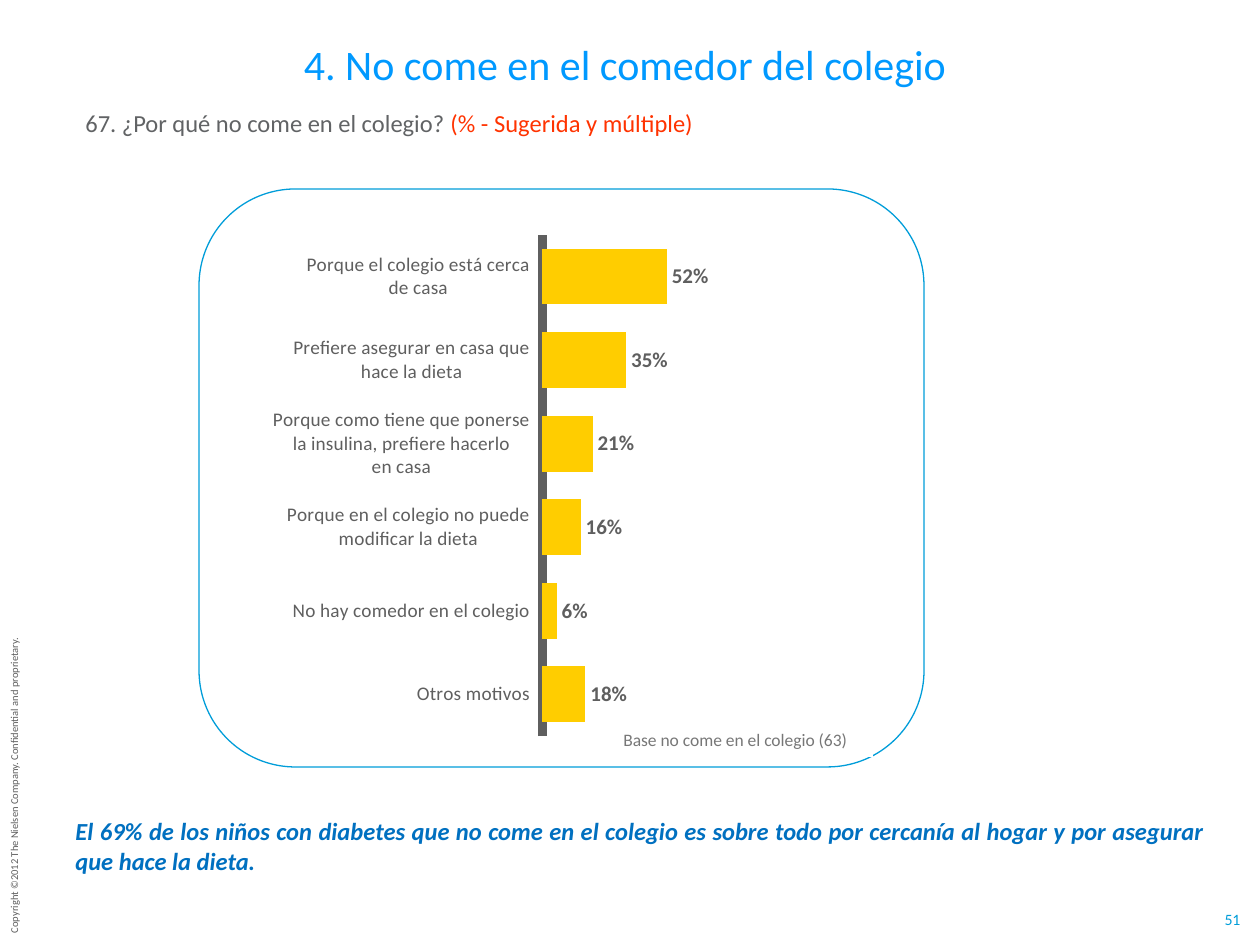
from dataclasses import dataclass

from lxml.etree import SubElement
from pptx import Presentation
from pptx.chart.data import CategoryChartData
from pptx.dml.color import RGBColor
from pptx.enum.chart import XL_CHART_TYPE, XL_LABEL_POSITION, XL_TICK_LABEL_POSITION, XL_TICK_MARK
from pptx.enum.shapes import MSO_SHAPE
from pptx.enum.text import MSO_ANCHOR, MSO_AUTO_SIZE, PP_ALIGN
from pptx.oxml.ns import qn
from pptx.util import Emu, Pt

SCALE = 914400 / 126
FACE = "Calibri"
GREY = "5F5F5F"
BLUE = "009DD9"
BARS = {
    "Porque el colegio está cerca\nde casa": 0.52,
    "Prefiere asegurar en casa que\nhace la dieta": 0.35,
    "Porque como tiene que ponerse\nla insulina, prefiere hacerlo\nen casa": 0.21,
    "Porque en el colegio no puede\nmodificar la dieta": 0.16,
    "No hay comedor en el colegio": 0.06,
    "Otros motivos": 0.18,
}
PLOT = {"x": 0.51, "y": 0.023, "w": 0.401, "h": 0.902}


@dataclass
class Label:
    box: tuple[int, int, int, int]
    runs: list[tuple[str, str]]
    size: int
    align: PP_ALIGN = PP_ALIGN.LEFT
    strong: bool = False
    wrap: bool = True
    turn: int = 0
    pad: bool = True
    fill: str = ""


LABELS = [
    Label((-149, 770, 326, 25),
          [("Copyright ©2012 The Nielsen Company. Confidential and proprietary.", GREY)],
          6, wrap=False, turn=270),
    Label((1223, 910, 19, 19), [("51", BLUE)], 9, PP_ALIGN.CENTER, wrap=False, pad=False),
    Label((105, 32, 1040, 63), [("4. No come en el comedor del colegio", "0099FF")],
          24, PP_ALIGN.CENTER),
    Label((73, 102, 1187, 150),
          [("67. ¿Por qué no come en el colegio? ", "616365"),
           ("(% - Sugerida y múltiple)", "FF3300")], 14),
    Label((63, 810, 1155, 72),
          [("El 69% de los niños con diabetes que no come en el colegio es sobre todo "
            "por cercanía al hogar y por asegurar que hace la dieta.", "0070C0")],
          14, PP_ALIGN.JUSTIFY, strong=True),
]
BASE = Label((611, 723, 262, 34), [("Base no come en el colegio (63)", "777777")],
             10, fill="FFFFFF")


def px(n: int) -> Emu:
    return Emu(round(n * SCALE))


def hue(code: str) -> RGBColor:
    return RGBColor.from_string(code)


def paint(item, code: str) -> None:
    item.fill.solid()
    item.fill.fore_color.rgb = hue(code)


def write(slide, label: Label) -> None:
    box = slide.shapes.add_textbox(*map(px, label.box))
    box.rotation = label.turn
    if label.fill:
        paint(box, label.fill)
    frame = box.text_frame
    frame.word_wrap = label.wrap
    frame.auto_size = MSO_AUTO_SIZE.NONE if label.wrap else MSO_AUTO_SIZE.SHAPE_TO_FIT_TEXT
    if not label.pad:
        frame.margin_left = frame.margin_right = frame.margin_top = frame.margin_bottom = 0
        frame.vertical_anchor = MSO_ANCHOR.MIDDLE
    para = frame.paragraphs[0]
    para.alignment = label.align
    style(para.font, label.size, label.strong)
    para.font.italic = label.strong
    for text, code in label.runs:
        run = para.add_run()
        run.text = text
        run.font.color.rgb = hue(code)


def style(font, size: int, bold: bool, code: str = GREY) -> None:
    font.name, font.size, font.bold = FACE, Pt(size), bold
    font.color.rgb = hue(code)


def panel(slide) -> None:
    card = slide.shapes.add_shape(MSO_SHAPE.ROUNDED_RECTANGLE, *map(px, (199, 189, 725, 578)))
    card.shadow.inherit = False
    paint(card, "FFFFFF")
    card.line.color.rgb = hue(BLUE)
    card.line.width = Pt(0.75)


def place(chart) -> None:
    area = chart.plots[0]._element.getparent()
    layout = area.find(qn("c:layout"))
    if layout is None:
        layout = SubElement(area, qn("c:layout"))
        area.insert(0, layout)
    manual = SubElement(layout, qn("c:manualLayout"))
    parts = {"layoutTarget": "inner", "xMode": "edge", "yMode": "edge", **PLOT}
    for tag, value in parts.items():
        SubElement(manual, qn(f"c:{tag}")).set("val", str(value))


def graph(slide) -> None:
    data = CategoryChartData(number_format="0%")
    data.categories = list(BARS)
    data.add_series("Motivos", list(BARS.values()))
    chart = slide.shapes.add_chart(
        XL_CHART_TYPE.BAR_CLUSTERED, *map(px, (238, 222, 597, 556)), data).chart
    chart.has_legend = chart.has_title = False
    style(chart.font, 12, True)
    place(chart)

    axis = chart.category_axis
    axis.reverse_order = True
    axis.major_tick_mark = axis.minor_tick_mark = XL_TICK_MARK.NONE
    axis.tick_label_position = XL_TICK_LABEL_POSITION.LOW
    axis.format.line.color.rgb = hue(GREY)
    axis.format.line.width = Pt(5)
    style(axis.tick_labels.font, 11, False)
    scale = chart.value_axis
    scale.minimum_scale, scale.maximum_scale = 0, 1
    scale.has_major_gridlines = scale.visible = False

    plot = chart.plots[0]
    plot.gap_width = 50
    plot.vary_by_categories = False
    paint(plot.series[0].format, "FFCD00")
    plot.has_data_labels = True
    tags = plot.data_labels
    tags.show_value = True
    tags.position = XL_LABEL_POSITION.OUTSIDE_END
    tags.number_format, tags.number_format_is_linked = "0%", False
    style(tags.font, 12, True)


def main() -> None:
    """Build the slide on school lunches and save it."""
    deck = Presentation()
    deck.slide_width, deck.slide_height = px(1260), px(945)
    slide = deck.slides.add_slide(deck.slide_layouts[6])
    panel(slide)
    for label in LABELS:
        write(slide, label)
    graph(slide)
    write(slide, BASE)
    deck.save("out.pptx")


if __name__ == "__main__":
    main()
